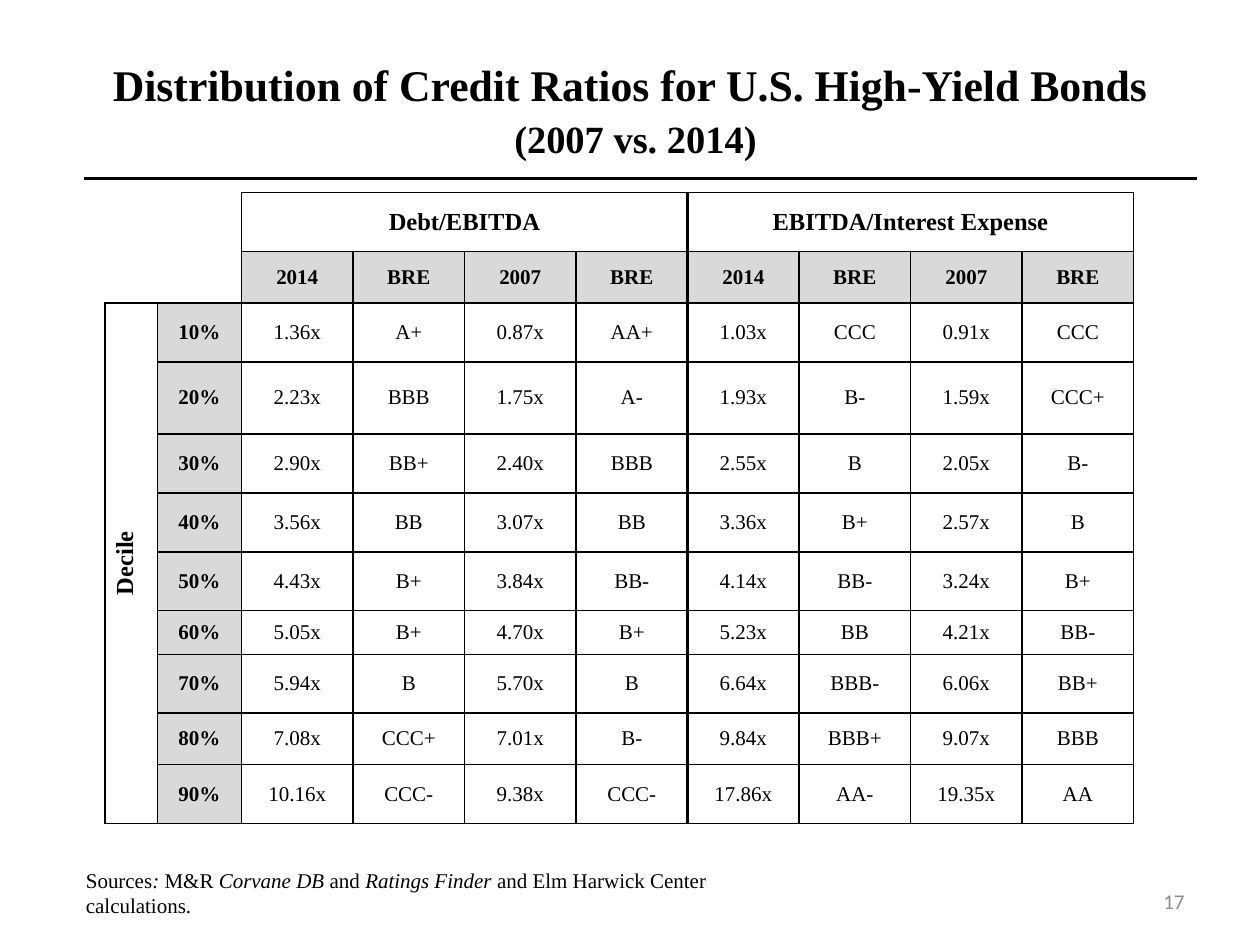
from dataclasses import dataclass

from lxml import etree
from pptx import Presentation
from pptx.dml.color import RGBColor
from pptx.enum import shapes, text
from pptx.oxml.ns import qn
from pptx.util import Pt


@dataclass(frozen=True)
class Theme:
    ink: str = "000000"
    shade: str = "D9D9D9"
    muted: str = "8C8C8C"
    serif: str = "Times New Roman"
    sans: str = "Calibri"
    title: float = 25
    sub: float = 22
    head: float = 14
    body: float = 12
    thin: float = 1
    thick: float = 2.25


T = Theme()
MID = text.MSO_ANCHOR.MIDDLE
ALIGN = text.PP_ALIGN

HEADS = ("Debt/EBITDA", "EBITDA/Interest Expense")
YEARS = ["2014", "BRE", "2007", "BRE"] * 2
RATIOS = """
10% 1.36x A+ 0.87x AA+ 1.03x CCC 0.91x CCC
20% 2.23x BBB 1.75x A- 1.93x B- 1.59x CCC+
30% 2.90x BB+ 2.40x BBB 2.55x B 2.05x B-
40% 3.56x BB 3.07x BB 3.36x B+ 2.57x B
50% 4.43x B+ 3.84x BB- 4.14x BB- 3.24x B+
60% 5.05x B+ 4.70x B+ 5.23x BB 4.21x BB-
70% 5.94x B 5.70x B 6.64x BBB- 6.06x BB+
80% 7.08x CCC+ 7.01x B- 9.84x BBB+ 9.07x BBB
90% 10.16x CCC- 9.38x CCC- 17.86x AA- 19.35x AA
"""
WIDTHS = [30, 48] + [63.75] * 8
HEIGHTS = [33.7, 29.4, 33.7, 41.2, 33.7, 33.7, 33.7, 24.9, 33.7, 29.4, 33.7]
SPLIT = 6  # first column of the right-hand group


def style(para, size, bold=False, color=T.ink, name=T.serif, align=ALIGN.CENTER):
    para.alignment = align
    font = para.font
    font.size, font.bold, font.name = Pt(size), bold, name
    font.color.rgb = RGBColor.from_string(color)


def add_title(slide, x, y, w, h):
    shape = slide.shapes.title
    shape.left, shape.top, shape.width, shape.height = map(Pt, (x, y, w, h))
    frame = shape.text_frame
    frame.auto_size = text.MSO_AUTO_SIZE.NONE
    frame.vertical_anchor = MID
    para = frame.paragraphs[0]
    style(para, T.title, bold=True)
    para.add_run().text = "Distribution of Credit Ratios for U.S. High-Yield Bonds"
    para.add_line_break()
    para.add_run().text = " "
    run = para.add_run()
    run.text = "(2007 vs. 2014)"
    run.font.size = Pt(T.sub)


def add_rule(slide, x, y, w):
    line = slide.shapes.add_connector(
        shapes.MSO_CONNECTOR.STRAIGHT, Pt(x), Pt(y), Pt(x + w), Pt(y))
    line.line.color.rgb = RGBColor.from_string(T.ink)
    line.line.width = Pt(T.thick)
    etree.SubElement(line._element.spPr, qn("a:effectLst"))


def set_edges(cell, edges):
    """Draw each side at its width; a width of 0 hides it."""
    props = cell._tc.get_or_add_tcPr()
    for i, side in enumerate("LRTB"):
        wide = edges[side]
        line = etree.Element(qn("a:ln" + side), w=str(int(Pt(wide))))
        if wide:
            fill = etree.SubElement(line, qn("a:solidFill"))
            etree.SubElement(fill, qn("a:srgbClr"), val=T.ink)
        else:
            etree.SubElement(line, qn("a:noFill"))
        props.insert(i, line)


def find_edges(row, col, span):
    edges = dict.fromkeys("LRTB", T.thin)
    if row < 2 and col < 2:  # empty corner
        edges = {"L": 0, "T": 0, "R": T.thin * (col == 1), "B": T.thin * (row == 1)}
    if col == SPLIT:
        edges["L"] = T.thick
    if col + span == SPLIT:
        edges["R"] = T.thick
    return edges


def add_grid(slide, x, y):
    rows = [["", "", HEADS[0], "", "", "", HEADS[1], "", "", ""], ["", ""] + YEARS]
    rows += [[""] + line.split() for line in RATIOS.strip().splitlines()]
    rows[2][0] = "Decile"
    frame = slide.shapes.add_table(
        len(rows), len(WIDTHS), Pt(x), Pt(y), Pt(sum(WIDTHS)), Pt(sum(HEIGHTS)))
    table = frame.table
    table.first_row = table.horz_banding = False
    for col, wide in zip(table.columns, WIDTHS):
        col.width = Pt(wide)
    for row, high in zip(table.rows, HEIGHTS):
        row.height = Pt(high)

    # Merged headings
    for col in (2, SPLIT):
        table.cell(0, col).merge(table.cell(0, col + 3))
    side = table.cell(2, 0)
    side.merge(table.cell(len(rows) - 1, 0))

    # Text, fill and borders
    for r, row in enumerate(rows):
        for c, word in enumerate(row):
            cell = table.cell(r, c)
            cell.vertical_anchor = MID
            shaded = (r == 1 and c > 1) or (r > 1 and c == 1)
            large = r == 0 or c == 0
            para = cell.text_frame.paragraphs[0]
            style(para, T.head if large else T.body, bold=large or shaded)
            if word:
                para.add_run().text = word
            if shaded:
                cell.fill.solid()
                cell.fill.fore_color.rgb = RGBColor.from_string(T.shade)
            else:
                cell.fill.background()
            span = cell.span_width if cell.is_merge_origin else 1
            set_edges(cell, find_edges(r, c, span))
    side._tc.get_or_add_tcPr().set("vert", "vert270")


def add_box(slide, x, y, w, h):
    frame = slide.shapes.add_textbox(Pt(x), Pt(y), Pt(w), Pt(h)).text_frame
    frame.word_wrap = True
    return frame


def add_source(slide, x, y, w, h):
    frame = add_box(slide, x, y, w, h)
    frame.auto_size = text.MSO_AUTO_SIZE.SHAPE_TO_FIT_TEXT
    para = frame.paragraphs[0]
    style(para, T.body, align=ALIGN.LEFT)
    parts = ("Sources", ": ", "M&R ", "Corvane DB ", "and ", "Ratings Finder ",
             "and Elm Harwick Center calculations.")
    for i, part in enumerate(parts):
        run = para.add_run()
        run.text = part
        run.font.italic = i % 2 == 1


def add_number(slide, x, y, w, h):
    frame = add_box(slide, x, y, w, h)
    frame.vertical_anchor = MID
    para = frame.paragraphs[0]
    style(para, T.body, color=T.muted, name=T.sans, align=ALIGN.RIGHT)
    para.add_run().text = "17"


def main():
    deck = Presentation()
    deck.slide_width, deck.slide_height = Pt(720), Pt(540)
    slide = deck.slides.add_slide(deck.slide_layouts.get_by_name("Title Only"))
    add_title(slide, 36, 18, 648, 90)
    add_number(slide, 516, 500.5, 168, 28.75)
    add_rule(slide, 48, 102, 636)
    add_source(slide, 42, 492, 432, 21.6)
    add_grid(slide, 60, 110)
    deck.save("out.pptx")


if __name__ == "__main__":
    main()
